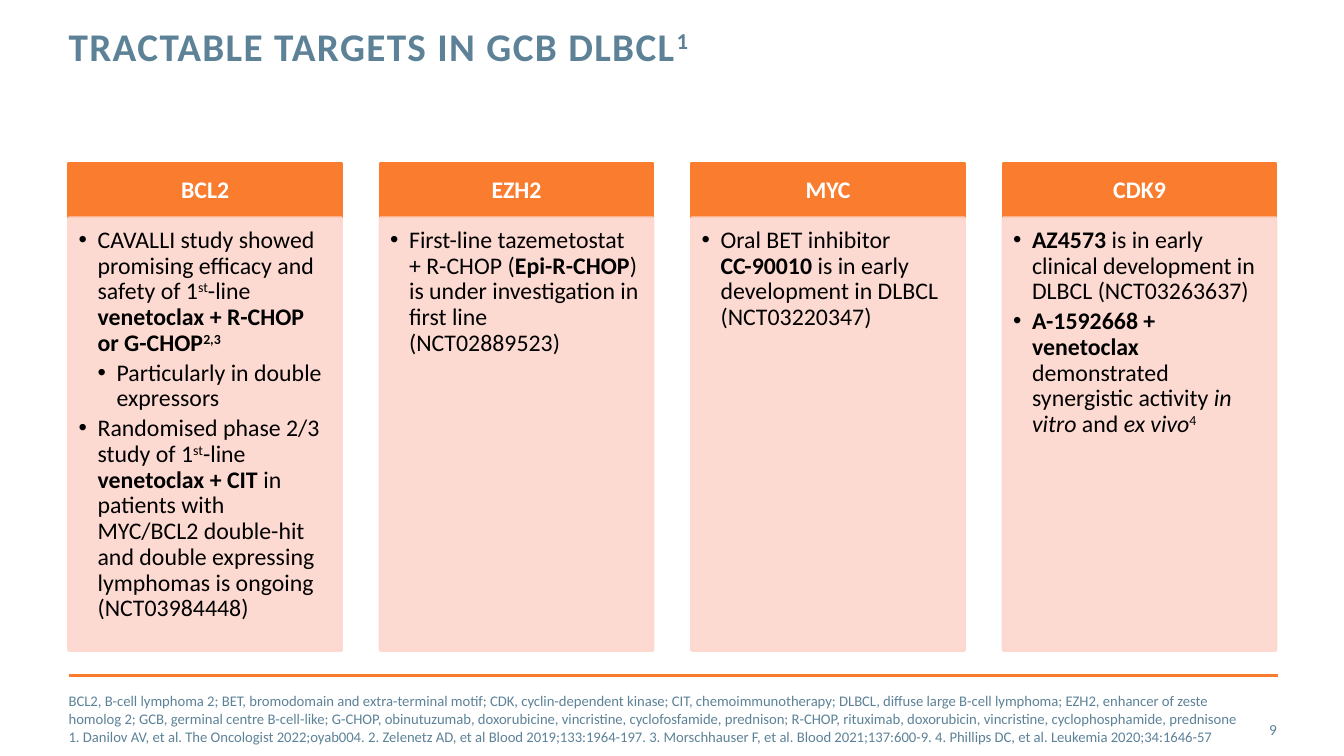
import pptx
import pptx.dml.color
import pptx.enum.shapes
import pptx.enum.text
import pptx.oxml.ns
import pptx.util
from lxml import etree

Cm = pptx.util.Cm
Pt = pptx.util.Pt
ALIGN = pptx.enum.text.PP_ALIGN
ANCHOR = pptx.enum.text.MSO_ANCHOR
qn = pptx.oxml.ns.qn

LEFT, TOP, WIDTH, STEP = 1.73, 4.11, 6.88, 7.85
HEAD, BODY = 1.38, 10.9

# Run styles: b bold, i italic, ^ superscript. Each point is (level, runs).
TARGETS = [
    ("BCL2", [
        (0, [("CAVALLI study showed promising efficacy and safety of 1", ""),
             ("st", "^"), ("-line ", ""),
             ("venetoclax + R-CHOP or G-CHOP", "b"), ("2,3", "b^")]),
        (1, [("Particularly in double expressors", "")]),
        (0, [("Randomised phase 2/3 study of 1", ""), ("st", "^"),
             ("-line ", ""), ("venetoclax + CIT ", "b"),
             ("in patients with MYC/BCL2 double-hit and double expressing "
              "lymphomas is ongoing (NCT03984448)", "")]),
    ]),
    ("EZH2", [
        (0, [("First-line tazemetostat + R-CHOP (", ""), ("Epi-R-CHOP", "b"),
             (") is under investigation in first line (NCT02889523)", "")]),
    ]),
    ("MYC", [
        (0, [("Oral BET inhibitor ", ""), ("CC-90010", "b"),
             (" is in early development in DLBCL (NCT03220347)", "")]),
    ]),
    ("CDK9", [
        (0, [("AZ4573", "b"),
             (" is in early clinical development in DLBCL (NCT03263637)", "")]),
        (0, [("A-1592668 + venetoclax ", "b"),
             ("demonstrated synergistic activity ", ""), ("in vitro ", "i"),
             ("and ", ""), ("ex vivo", "i"), ("4", "^")]),
    ]),
]

TERMS = (
    "BCL2, B-cell lymphoma 2; BET, bromodomain and extra-terminal motif; "
    "CDK, cyclin-dependent kinase; CIT, chemoimmunotherapy; DLBCL, diffuse "
    "large B-cell lymphoma; EZH2, enhancer of zeste homolog 2; GCB, germinal "
    "centre B-cell-like; G-CHOP, obinutuzumab, doxorubicine, vincristine, "
    "cyclofosfamide, prednison; R-CHOP, rituximab, doxorubicin, vincristine, "
    "cyclophosphamide, prednisone")
REFS = (
    "1. Danilov AV, et al. The Oncologist 2022;oyab004. "
    "2. Zelenetz AD, et al Blood 2019;133:1964-197. "
    "3. Morschhauser F, et al. Blood 2021;137:600-9. "
    "4. Phillips DC, et al. Leukemia 2020;34:1646-57")


def rgb(code):
    return pptx.dml.color.RGBColor.from_string(code)


class Deck:
    font = "Calibri"
    orange, pink, slate = "FA7C2E", "FDD7CD", "5D8298"

    def __init__(self, slide):
        self.slide = slide

    def frame(self, shape, anchor, inset=(0, 0, 0, 0)):
        """Set up the text frame; inset is left, top, right, bottom in cm."""
        tf = shape.text_frame
        tf.word_wrap = True
        tf.vertical_anchor = anchor
        (tf.margin_left, tf.margin_top,
         tf.margin_right, tf.margin_bottom) = map(Cm, inset)
        return tf

    def run(self, para, text, size, color, style=""):
        run = para.add_run()
        run.text = text
        font = run.font
        font.name, font.size = self.font, Pt(size)
        font.bold, font.italic = "b" in style, "i" in style
        font.color.rgb = rgb(color)
        if "^" in style:
            font._element.set("baseline", "30000")
        return run

    def text(self, x, y, w, h, anchor=ANCHOR.MIDDLE):
        box = self.slide.shapes.add_textbox(Cm(x), Cm(y), Cm(w), Cm(h))
        return self.frame(box, anchor).paragraphs[0]

    def rect(self, x, y, w, h, color, alpha=100):
        kind = pptx.enum.shapes.MSO_SHAPE.RECTANGLE
        shape = self.slide.shapes.add_shape(kind, Cm(x), Cm(y), Cm(w), Cm(h))
        shape.shadow.inherit = False
        shape.fill.solid()
        shape.fill.fore_color.rgb = rgb(color)
        shape.line.color.rgb = rgb(color)
        shape.line.width = Pt(2)
        if alpha < 100:
            for tone in shape._element.spPr.iter(qn("a:srgbClr")):
                etree.SubElement(tone, qn("a:alpha"), val=str(alpha * 1000))
        return shape

    def rule(self, x, y, w):
        kind = pptx.enum.shapes.MSO_CONNECTOR.STRAIGHT
        line = self.slide.shapes.add_connector(
            kind, Cm(x), Cm(y), Cm(x + w), Cm(y))
        line.line.color.rgb = rgb(self.orange)
        line.line.width = Pt(2)
        etree.SubElement(line._element.spPr, qn("a:effectLst"))

    def bullet(self, para, level):
        para.alignment = ALIGN.LEFT
        para.level = level
        para.line_spacing, para.space_after = 0.9, Pt(3)
        props = para._p.get_or_add_pPr()
        props.set("marL", str(Cm(0.48 * (level + 1))))
        props.set("indent", str(-Cm(0.48)))
        etree.SubElement(props, qn("a:buFont"), typeface="Arial")
        etree.SubElement(props, qn("a:buChar"), char="•")

    def card(self, x, name, points):
        head = self.rect(x, TOP, WIDTH, HEAD, self.orange)
        inset = (0.33, 0.2, 0.33, 0.2)
        para = self.frame(head, ANCHOR.MIDDLE, inset).paragraphs[0]
        para.alignment, para.line_spacing = ALIGN.CENTER, 0.9
        self.run(para, name, 17, "FFFFFF", "b")

        body = self.rect(x, TOP + HEAD, WIDTH, BODY, self.pink, 90)
        tf = self.frame(body, ANCHOR.TOP, (0.25, 0.25, 0.33, 0.38))
        for i, (level, runs) in enumerate(points):
            para = tf.add_paragraph() if i else tf.paragraphs[0]
            self.bullet(para, level)
            for text, style in runs:
                self.run(para, text, 17, "000000", style)


def main():
    prs = pptx.Presentation()
    prs.slide_width, prs.slide_height = Cm(33.87), Cm(19.05)
    deck = Deck(prs.slides.add_slide(prs.slide_layouts[6]))

    deck.rule(LEFT, 17.02, 30.48)
    title = deck.text(LEFT, 0.69, 24.28, 2.24, ANCHOR.TOP)
    title.line_spacing = Pt(30)
    for text, style in [("TRACTABLE TARGETS IN GCB DLBCL", "b"), ("1", "b^")]:
        run = deck.run(title, text, 28, deck.slate, style)
        run.font._element.set("spc", "100")

    for i, (name, points) in enumerate(TARGETS):
        deck.card(LEFT + i * STEP, name, points)

    page = deck.text(30, 17.86, 2.18, 1.02)
    page.alignment = ALIGN.RIGHT
    deck.run(page, "9", 11, deck.slate)

    notes = deck.text(LEFT, 17.6, 29.87, 1.02)
    deck.run(notes, TERMS, 10.5, deck.slate)
    notes.add_line_break()
    deck.run(notes, REFS, 10.5, deck.slate)

    prs.save("out.pptx")


if __name__ == "__main__":
    main()
